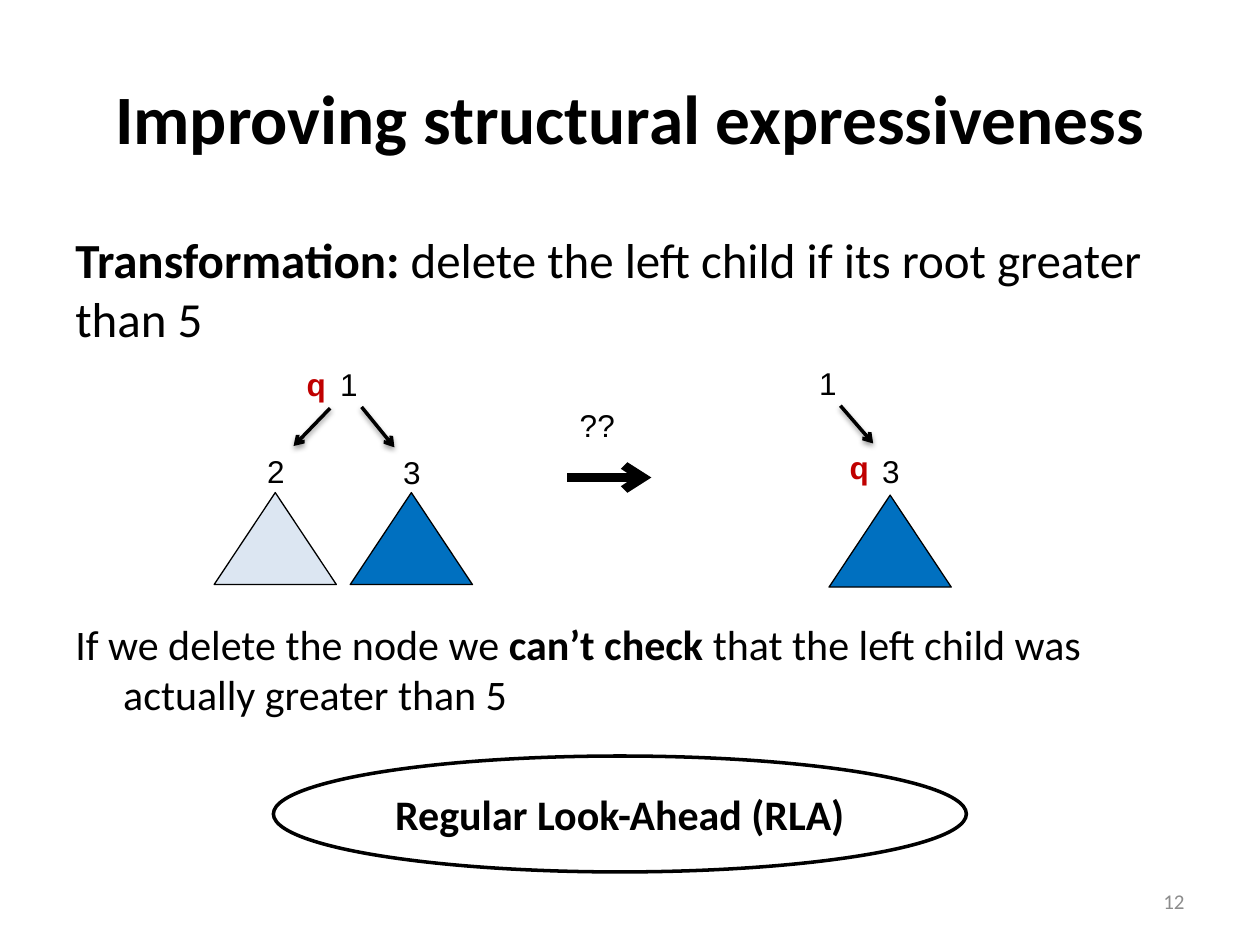
import pptx
import pptx.util
import pptx.dml.color
import pptx.enum.shapes
import pptx.enum.text
import pptx.oxml
import pptx.oxml.ns

Inches = pptx.util.Inches
Align = pptx.enum.text.PP_ALIGN
Anchor = pptx.enum.text.MSO_ANCHOR
Kind = pptx.enum.shapes.MSO_SHAPE
HUES = {"ink": "000000", "red": "C00000", "blue": "0070C0", "pale": "DCE6F2", "gray": "8C8C8C"}


def tint(name):
    return pptx.dml.color.RGBColor.from_string(HUES[name])


def write(text, box, size=18, font="Arial", hue="ink", bold="", align=Align.CENTER,
          anchor=Anchor.TOP, wrap=True, hang=0):
    frame = box.text_frame
    frame.word_wrap = wrap
    frame.vertical_anchor = anchor
    para = frame.paragraphs[0]
    para.alignment = align
    if hang:
        props = para._p.get_or_add_pPr()
        props.set("marL", str(Inches(hang)))
        props.set("indent", str(-Inches(hang)))
    head, mid, tail = text.partition(bold or text)
    for part, heavy in ((head, False), (mid, bool(bold)), (tail, False)):
        if part:
            run = para.add_run()
            run.text = part
            run.font.name = font
            run.font.size = pptx.util.Pt(size)
            run.font.bold = heavy
            run.font.color.rgb = tint(hue)


deck = pptx.Presentation()
deck.slide_width, deck.slide_height = Inches(10), Inches(7.5)
slide = deck.slides.add_slide(deck.slide_layouts[6])
shapes = slide.shapes

title = "Improving structural expressiveness"
rule = "Transformation: delete the left child if its root greater than 5"
note = "If we delete the node we can’t check that the left child was actually greater than 5"
left, mid = Align.LEFT, Anchor.MIDDLE
for text, at, style in (
    (title, (0.5, 0.3, 9, 1.25), dict(size=39.6, bold=title, anchor=mid)),
    (rule, (0.5, 1.77, 9, 1.05), dict(size=28, bold="Transformation: ", align=left)),
    (note, (0.5, 4.86, 9, 0.95), dict(size=24, bold="can’t check ", align=left, hang=0.38)),
    ("12", (7.17, 6.95, 2.33, 0.4), dict(size=12, hue="gray", align=Align.RIGHT, anchor=mid)),
):
    box = shapes.add_textbox(*map(Inches, at))
    write(text, box, font="Calibri", **style)

for text, x, y, wide in (
    ("1", 2.6, 2.85, 0.34), ("2", 2.02, 3.54, 0.34), ("3", 3.1, 3.55, 0.34),
    ("1", 6.4, 2.84, 0.34), ("3", 6.9, 3.54, 0.34), ("??", 4.5, 3.17, 0.48),
    ("q", 2.33, 2.85, 0.36), ("q", 6.64, 3.51, 0.36),
):
    box = shapes.add_textbox(Inches(x), Inches(y), Inches(wide), Inches(0.4))
    state = text == "q"
    write(text, box, hue="red" if state else "ink", bold="q" if state else "", wrap=False)

space = pptx.oxml.ns.nsdecls("a")
shade = (
    '<a:outerShdw blurRad="39370" dist="20320" dir="5400000" rotWithShape="0">'
    '<a:srgbClr val="000000"><a:alpha val="38000"/></a:srgbClr></a:outerShdw>'
)
for ends, width, glow in (
    ((2.62, 3.24, 2.33, 3.54), 2, shade),
    ((2.87, 3.23, 3.13, 3.55), 2, shade),
    ((6.67, 3.22, 6.93, 3.52), 2, shade),
    ((4.5, 3.79, 5.17, 3.79), 5, ""),
):
    edge = shapes.add_connector(pptx.enum.shapes.MSO_CONNECTOR.STRAIGHT, *map(Inches, ends))
    edge.line.color.rgb = tint("ink")
    edge.line.width = pptx.util.Pt(width)
    edge.line._get_or_add_ln().append(pptx.oxml.parse_xml(f'<a:tailEnd {space} type="arrow"/>'))
    edge._element.spPr.append(pptx.oxml.parse_xml(f"<a:effectLst {space}>{glow}</a:effectLst>"))

for kind, at, hue, width in (
    (Kind.ISOSCELES_TRIANGLE, (1.7, 3.91, 0.97, 0.73), "pale", 0.75),
    (Kind.ISOSCELES_TRIANGLE, (2.78, 3.91, 0.97, 0.73), "blue", 0.75),
    (Kind.ISOSCELES_TRIANGLE, (6.58, 3.93, 0.97, 0.73), "blue", 0.75),
    (Kind.OVAL, (2.17, 6, 5.5, 0.92), "", 2),
):
    shape = shapes.add_shape(kind, *map(Inches, at))
    shape.shadow.inherit = False
    shape.line.color.rgb = tint("ink")
    shape.line.width = pptx.util.Pt(width)
    if hue:
        shape.fill.solid()
        shape.fill.fore_color.rgb = tint(hue)
    else:
        shape.fill.background()
        label = "Regular Look-Ahead (RLA)"
        write(label, shape, size=24, font="Calibri", bold=label, anchor=mid)

deck.save("out.pptx")
